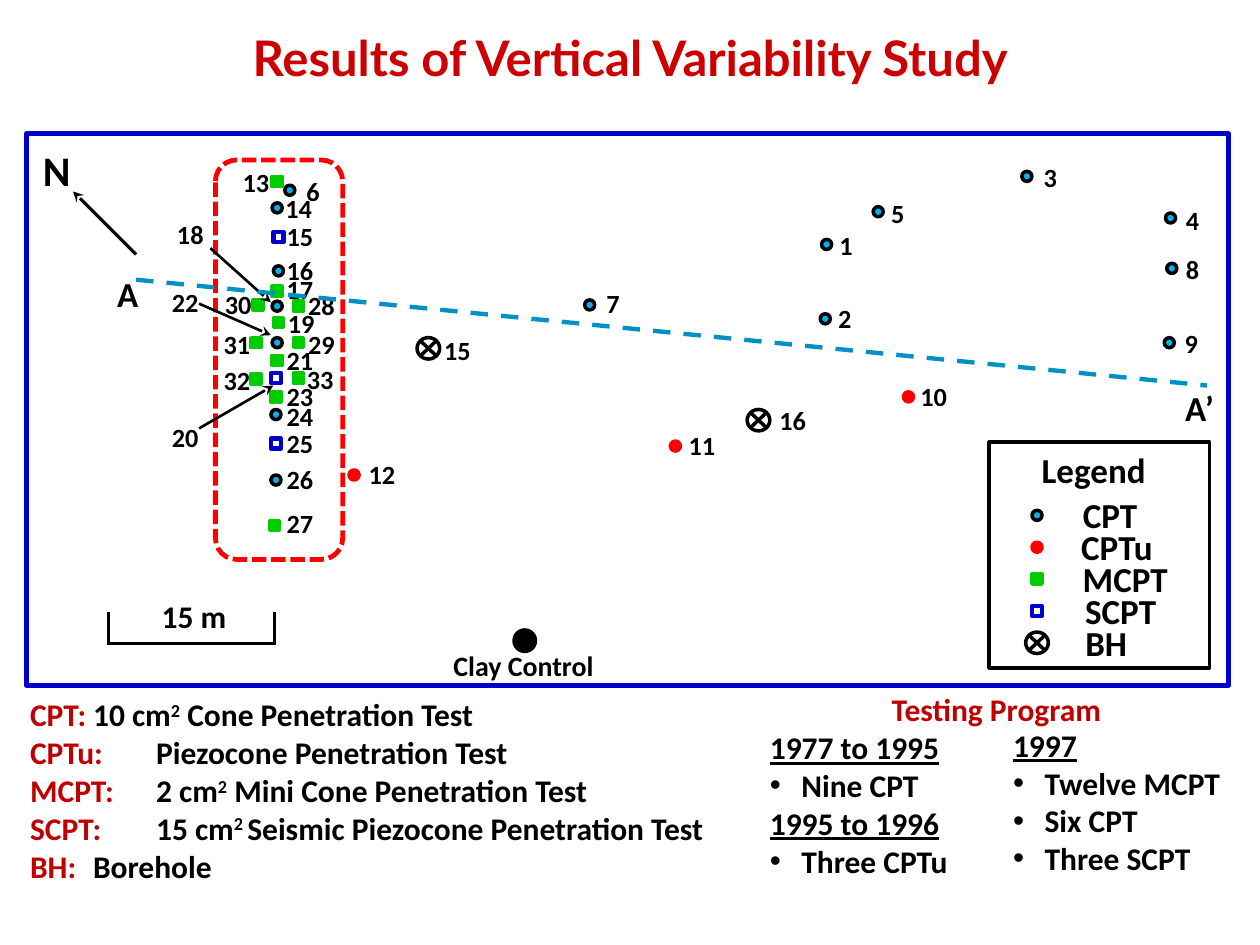
"""Build the site plan slide of the vertical variability study."""
from dataclasses import dataclass

from lxml import etree
from pptx import Presentation
from pptx.dml.color import RGBColor
from pptx.enum.dml import MSO_LINE
from pptx.enum.shapes import MSO_CONNECTOR, MSO_SHAPE
from pptx.enum.text import MSO_ANCHOR, MSO_AUTO_SIZE, PP_ALIGN
from pptx.oxml.ns import qn
from pptx.util import Inches, Pt

RECT, ROUNDED = MSO_SHAPE.RECTANGLE, MSO_SHAPE.ROUNDED_RECTANGLE
OVAL, CROSSED = MSO_SHAPE.OVAL, MSO_SHAPE.FLOWCHART_SUMMING_JUNCTION
STRAIGHT = MSO_CONNECTOR.STRAIGHT
SHORT_DASH, DASH = MSO_LINE.SQUARE_DOT, MSO_LINE.DASH
LEFT, CENTER, RIGHT = PP_ALIGN.LEFT, PP_ALIGN.CENTER, PP_ALIGN.RIGHT

BLACK = RGBColor(0x00, 0x00, 0x00)
BLUE = RGBColor(0x00, 0x00, 0xCC)
SKY = RGBColor(0x00, 0xB0, 0xF0)
TEAL = RGBColor(0x00, 0x91, 0xC4)
RED = RGBColor(0xFF, 0x00, 0x00)
TITLE_RED = RGBColor(0xCC, 0x00, 0x00)
DARK_RED = RGBColor(0xC0, 0x00, 0x00)
GREEN = RGBColor(0x00, 0xCC, 0x00)

WIDTH, HEIGHT = Inches(10), Inches(7.5)
COLUMNS, ROWS = 1000, 750


@dataclass(frozen=True)
class Mark:
    outline: int
    fill: RGBColor | None
    line: RGBColor
    weight: float
    width: int = 8
    height: int = 8


@dataclass(frozen=True)
class Site:
    number: str
    column: int
    row: int
    label_column: int
    label_row: int


@dataclass(frozen=True)
class Label:
    text: str
    column: float
    row: float
    width: int
    height: int
    size: int


@dataclass(frozen=True)
class Stroke:
    start: tuple[int, int]
    end: tuple[int, int]
    weight: float
    color: RGBColor = BLACK
    dash: int | None = None
    arrow: bool = False


MARKS = {
    "CPT": Mark(OVAL, SKY, BLACK, 2),
    "CPTu": Mark(OVAL, RED, RED, 2),
    "MCPT": Mark(RECT, GREEN, GREEN, 2),
    "SCPT": Mark(RECT, None, BLUE, 2.5),
    "BH": Mark(CROSSED, None, BLACK, 2, 18, 17),
}
SITES = {
    "CPT": [
        Site("1", 652, 190, 656, 177), Site("2", 651, 249, 655, 235),
        Site("3", 811, 136, 818, 123), Site("4", 925, 169, 931, 157),
        Site("5", 693, 164, 697, 152), Site("6", 226, 147, 233, 134),
        Site("7", 464, 238, 471, 223), Site("8", 926, 209, 931, 196),
        Site("9", 924, 268, 930, 255), Site("14", 216, 161, 216, 148),
        Site("16", 217, 211, 217, 197), Site("18", 216, 239, 130, 168),
        Site("22", 216, 268, 126, 222), Site("24", 215, 325, 217, 313),
        Site("26", 215, 377, 217, 363),
    ],
    "CPTu": [
        Site("10", 717, 311, 720, 297), Site("11", 532, 350, 536, 336),
        Site("12", 277, 373, 282, 359),
    ],
    "MCPT": [
        Site("13", 216, 140, 182, 127), Site("17", 216, 227, 217, 212),
        Site("19", 217, 252, 218, 239), Site("21", 216, 282, 217, 268),
        Site("23", 215, 311, 217, 297), Site("27", 214, 413, 217, 398),
        Site("28", 233, 239, 234, 225), Site("29", 233, 268, 234, 256),
        Site("30", 201, 238, 168, 224), Site("31", 199, 268, 167, 256),
        Site("32", 199, 297, 167, 284), Site("33", 233, 296, 233, 283),
    ],
    "SCPT": [
        Site("15", 217, 184, 217, 170), Site("20", 215, 296, 126, 329),
        Site("25", 215, 348, 217, 334),
    ],
    "BH": [Site("15", 331, 268, 342, 260), Site("16", 593, 325, 608, 316)],
}
LEGEND_LABELS = [("CPT", 849, 64), ("CPTu", 848, 77), ("MCPT", 849, 88),
                 ("SCPT", 851, 77), ("BH", 851, 54)]
LEGEND_CENTER, LEGEND_FIRST_ROW, LEGEND_STEP = 823, 409, 25.3
MAP_LABELS = [
    Label("15 m", 118, 469, 72, 40, 18),
    Label("Clay Control", 349, 510, 133, 37, 16),
    Label("N", 24, 110, 42, 50, 24),
    Label("A", 83, 211, 37, 44, 20),
    Label("A’", 930, 302, 44, 44, 20),
    Label("Legend", 816, 351, 104, 44, 20),
]
STROKES = [
    Stroke((108, 202), (58, 152), 1.75, arrow=True),
    Stroke((85, 511), (219, 511), 1.75),
    Stroke((218, 511), (218, 486), 1.5),
    Stroke((86, 511), (86, 486), 1.5),
    Stroke((167, 197), (215, 240), 1.5, arrow=True),
    Stroke((158, 241), (215, 266), 1.5, arrow=True),
    Stroke((158, 340), (217, 306), 1.5, arrow=True),
    Stroke((108, 222), (958, 306), 2.5, TEAL, DASH),
]
GLOSSARY = [
    ("CPT:", "10 cm", "2", " Cone Penetration Test"),
    ("CPTu:", "Piezocone Penetration Test", "", ""),
    ("MCPT:", "2 cm", "2", " Mini Cone Penetration Test"),
    ("SCPT:", "15 cm", "2 ", "Seismic Piezocone Penetration Test"),
    ("BH:", "Borehole", "", ""),
]
EARLY_PROGRAM = {"1977 to 1995": ["Nine CPT"], "1995 to 1996": ["Three CPTu"]}
LATE_PROGRAM = {"1997": ["Twelve MCPT", "Six CPT", "Three SCPT"]}


def box(column: float, row: float, width: float, height: float) -> tuple[int, ...]:
    """Turn grid columns and rows into slide lengths."""
    return (int(column * WIDTH / COLUMNS), int(row * HEIGHT / ROWS),
            int(width * WIDTH / COLUMNS), int(height * HEIGHT / ROWS))


def write(paragraph, text: str, *, size: float = 18, color: RGBColor = BLACK,
          font: str = "Calibri", underline: bool = False, raised: bool = False) -> None:
    """Add a bold run of text in the given format."""
    run = paragraph.add_run()
    run.text = text
    run.font.size, run.font.name, run.font.bold = Pt(size), font, True
    run.font.color.rgb, run.font.underline = color, underline
    if raised:
        run._r.get_or_add_rPr().set("baseline", "30000")


def next_paragraph(frame, align: int = LEFT, bullet: bool = False):
    """Return a fresh paragraph with or without a bullet."""
    first = frame.paragraphs[0]
    paragraph = frame.add_paragraph() if first.runs else first
    paragraph.alignment, paragraph.space_before = align, Pt(0)
    properties = paragraph._p.get_or_add_pPr()
    indent = Inches(0.25) if bullet else 0
    properties.set("marL", str(indent))
    properties.set("indent", str(-indent))
    if bullet:
        etree.SubElement(properties, qn("a:buFont")).set("typeface", "Arial")
        etree.SubElement(properties, qn("a:buChar")).set("char", "•")
    else:
        etree.SubElement(properties, qn("a:buNone"))
    return paragraph


def place(shape, area: tuple[int, ...]):
    """Move a placeholder and return its wrapped text frame."""
    shape.left, shape.top, shape.width, shape.height = area
    shape.text_frame.word_wrap = True
    shape.text_frame.auto_size = MSO_AUTO_SIZE.NONE
    return shape.text_frame


def draw_program(frame, program: dict[str, list[str]]) -> None:
    """Write underlined periods, each with its bulleted tests."""
    for period, tests in program.items():
        write(next_paragraph(frame), period, underline=True)
        for test in tests:
            write(next_paragraph(frame, bullet=True), test)


def draw_glossary(slide) -> None:
    """Write each abbreviation with its meaning after a tab."""
    frame = slide.shapes.add_textbox(*box(14, 547, 558, 162)).text_frame
    frame.word_wrap = True
    for term, meaning, power, rest in GLOSSARY:
        paragraph = next_paragraph(frame)
        write(paragraph, term, color=DARK_RED)
        write(paragraph, "\t" + meaning)
        if power:
            write(paragraph, power, raised=True)
            write(paragraph, rest)


def draw_mark(slide, mark: Mark, column: float, row: float, dash: int | None = None) -> None:
    """Draw an outlined shape with its top left corner on the grid."""
    shape = slide.shapes.add_shape(mark.outline, *box(column, row, mark.width, mark.height))
    shape.shadow.inherit = False
    if mark.fill is None:
        shape.fill.background()
    else:
        shape.fill.solid()
        shape.fill.fore_color.rgb = mark.fill
    shape.line.color.rgb, shape.line.width = mark.line, Pt(mark.weight)
    if dash is not None:
        shape.line.dash_style = dash


def draw_label(slide, label: Label) -> None:
    """Draw a centred one-line label."""
    area = box(label.column, label.row, label.width, label.height)
    frame = slide.shapes.add_textbox(*area).text_frame
    frame.word_wrap, frame.auto_size = False, MSO_AUTO_SIZE.SHAPE_TO_FIT_TEXT
    write(next_paragraph(frame, CENTER), label.text, size=label.size)


def draw_stroke(slide, stroke: Stroke) -> None:
    """Draw a straight line, dashed or with an arrowhead if asked."""
    line = slide.shapes.add_connector(STRAIGHT, *box(*stroke.start, *stroke.end))
    line.line.color.rgb, line.line.width = stroke.color, Pt(stroke.weight)
    if stroke.dash is not None:
        line.line.dash_style = stroke.dash
    if stroke.arrow:
        etree.SubElement(line.line._get_or_add_ln(), qn("a:tailEnd")).set("type", "stealth")
    etree.SubElement(line._element.spPr, qn("a:effectLst"))


def draw_map(slide) -> None:
    """Draw the site plan with its test sites and legend."""
    draw_mark(slide, Mark(RECT, None, BLUE, 2.75, 954, 438), 21, 106)
    draw_mark(slide, Mark(ROUNDED, None, RED, 2.75, 101, 317), 171, 127, SHORT_DASH)
    draw_mark(slide, Mark(OVAL, BLACK, BLACK, 2, 17, 17), 408, 500)
    draw_mark(slide, Mark(RECT, None, BLACK, 2, 175, 179), 785, 351)
    for test, sites in SITES.items():
        for site in sites:
            draw_mark(slide, MARKS[test], site.column, site.row)
            width = 20 + 11 * len(site.number)
            draw_label(slide, Label(site.number, site.label_column, site.label_row, width, 35, 15))
    for index, (test, column, width) in enumerate(LEGEND_LABELS):
        mark, middle = MARKS[test], LEGEND_FIRST_ROW + index * LEGEND_STEP
        draw_mark(slide, mark, LEGEND_CENTER - mark.width / 2, middle - mark.height / 2)
        draw_label(slide, Label(test, column, middle - 22, width, 44, 20))
    for stroke in STROKES:
        draw_stroke(slide, stroke)
    for label in MAP_LABELS:
        draw_label(slide, label)


def main() -> None:
    """Build and save the slide."""
    deck = Presentation()
    deck.slide_width, deck.slide_height = WIDTH, HEIGHT
    slide = deck.slides.add_slide(deck.slide_layouts[3])
    title, early, late = slide.placeholders
    heading = place(title, box(0, 8, 1000, 75))
    heading.vertical_anchor = MSO_ANCHOR.MIDDLE
    write(next_paragraph(heading, CENTER), "Results of Vertical Variability Study",
          size=28, color=TITLE_RED, font="Lato")
    early_frame = place(early, box(601, 543, 283, 162))
    write(next_paragraph(early_frame, RIGHT), "Testing Program", color=DARK_RED)
    draw_program(early_frame, EARLY_PROGRAM)
    draw_program(place(late, box(794, 571, 200, 131)), LATE_PROGRAM)
    draw_glossary(slide)
    draw_map(slide)
    deck.save("out.pptx")


if __name__ == "__main__":
    main()
